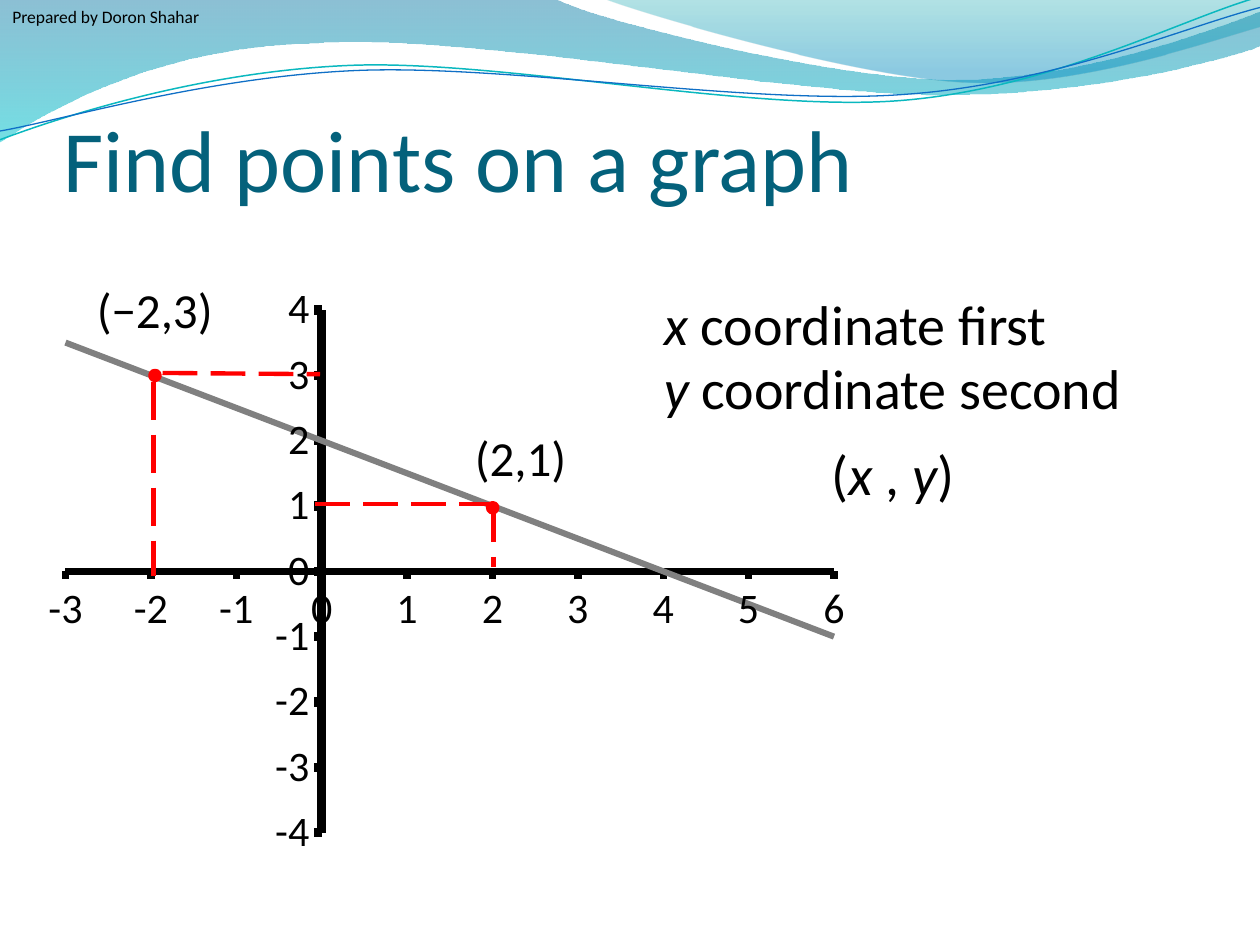
from dataclasses import dataclass
from math import cos, radians, sin

from lxml import etree
from pptx import Presentation
from pptx.chart.data import XyChartData
from pptx.dml.color import RGBColor as RGB
from pptx.enum.chart import XL_CHART_TYPE as Kind, XL_MARKER_STYLE as Mark, XL_TICK_MARK as Tick
from pptx.enum.dml import MSO_LINE as Dash
from pptx.enum.shapes import MSO_CONNECTOR as Link, MSO_SHAPE as Form
from pptx.enum.text import MSO_ANCHOR as Anchor, MSO_AUTO_SIZE as Fit, PP_ALIGN as Align
from pptx.oxml import parse_xml
from pptx.oxml.ns import nsdecls, qn
from pptx.util import Inches, Pt


@dataclass(frozen=True)
class Theme:
    font: str = "Calibri"
    chart: str = "Cambria"
    ink: RGB = RGB(0, 0, 0)
    title: RGB = RGB(0x04, 0x61, 0x7B)
    red: RGB = RGB(255, 0, 0)
    blue: RGB = RGB(0x0F, 0x6F, 0xC6)
    teal: RGB = RGB(0x0A, 0xB8, 0xBF)
    trend: str = "808080"
    head: int = 50
    body: int = 32
    label: int = 28
    axis: int = 24
    note: int = 10


theme = Theme()


def write(frame, text, size=theme.body, color=theme.ink):
    """Fill the frame; parts between asterisks are italic."""
    frame.word_wrap = True
    para = frame.paragraphs[0]
    para.alignment = Align.LEFT
    for i, part in enumerate(text.split("*")):
        if part:
            run = para.add_run()
            run.text = part
            font = run.font
            font.name, font.size, font.italic = theme.font, Pt(size), i % 2 == 1
            font.color.rgb = color


def draw_wave(start, parts, close=False):
    """Draw lines (2 numbers) and cubic curves (6 numbers) on the layout."""
    points = [start] + [part[i:i + 2] for part in parts for i in range(0, len(part), 2)]
    points = [(Inches(x), Inches(y)) for x, y in points]
    pen = shapes.build_freeform(*points[0], scale=1.0)
    pen.add_line_segments(points[1:], close=close)
    wave = pen.convert_to_shape()
    wave.shadow.inherit = False
    lines = wave.element.findall(".//" + qn("a:lnTo"))
    for part in parts:
        group, lines = lines[:len(part) // 2], lines[len(part) // 2:]
        if len(group) == 3:
            curve = etree.Element(qn("a:cubicBezTo"))
            group[0].addprevious(curve)
            for line in group:
                curve.append(line[0])
                line.getparent().remove(line)
    tree = layout.placeholders[0].element.getparent()
    wave.element[0][0].set("id", str(100 + len(tree)))
    tree.append(wave.element)
    return wave


deck = Presentation()
deck.slide_width, deck.slide_height = Inches(10), Inches(7.5)
layout = deck.slide_layouts[5]
slide = deck.slides.add_slide(layout)
shapes = slide.shapes

# Bands: start, parts, gradient stops (place, color, alpha)
bands = [
    ((0, 0), [(4.4, -0.01), (4.76, 0.17, 6.64, 0.63, 7.58, 0.63), (8.53, 0.63, 9.58, 0.26, 10, 0.09),
              (10.01, 0.36), (9.83, 0.44, 8.7, 0.76, 7.46, 0.75), (6.22, 0.75, 3.82, 0.28, 2.57, 0.34),
              (1.29, 0.36, 0.46, 0.83, -0.01, 1.13), (0, 0)],
     [(0, "0074A1", 45), (1, "00C6CF", 55)]),
    ((4.79, -0.01), [(5.09, 0.11, 6.82, 0.62, 7.69, 0.65), (8.56, 0.69, 9.61, 0.32, 10, 0.21),
                     (10, 0), (4.79, -0.01)],
     [(0, "00A1A9", 30), (0.8, "008BBF", 45)]),
]
for start, parts, stops in bands:
    band = draw_wave(start, parts, close=True)
    band.line.fill.background()
    band.fill.gradient()
    band.fill.gradient_angle = 270
    for stop, (place, color, _) in zip(band.fill.gradient_stops, stops):
        stop.position = place
        stop.color.rgb = RGB.from_string(color)
    for node, (_, _, alpha) in zip(band.element.spPr.iter(qn("a:srgbClr")), stops):
        etree.SubElement(node, qn("a:alpha")).set("val", str(alpha * 1000))

# Curves are laid flat about their middle, then tilted back
tilt = 2.7
c, s = cos(radians(tilt)), sin(radians(tilt))
curves = [
    (0.575, (0, 1.11), [(0.48, 0.93, 1.58, 0.57, 2.77, 0.52), (3.95, 0.47, 5.93, 0.89, 7.13, 0.8),
                        (8.33, 0.71, 9.38, 0.15, 9.98, -0.02)], theme.teal, 0.85),
    (0.59, (0, 1.04), [(0.47, 0.96, 1.64, 0.61, 2.83, 0.56), (4.03, 0.51, 5.97, 0.84, 7.17, 0.75),
                       (8.36, 0.67, 9.41, 0.21, 10, 0.06)], theme.blue, 0.75),
]
for mid, start, parts, color, width in curves:
    flat = []
    for part in [start] + parts:
        pairs = [(x - 5, y - mid) for x, y in zip(part[::2], part[1::2])]
        flat.append([n for x, y in pairs for n in (5 + x * c - y * s, mid + x * s + y * c)])
    curve = draw_wave(flat[0], flat[1:])
    curve.rotation = 360 - tilt
    curve.fill.background()
    curve.line.color.rgb, curve.line.width = color, Pt(width)

title = shapes.title
title.left, title.top, title.width, title.height = map(Inches, (0.5, 0.42, 9, 1.25))
frame = title.text_frame
frame.margin_left = frame.margin_right = frame.margin_bottom = 0
frame.vertical_anchor = Anchor.BOTTOM
write(frame, "Find points on a graph", size=theme.head, color=theme.title)

# Graph
wide, high = 6.58, 4.75
data = XyChartData()
series = data.add_series("Series 1")
for x in (0, 1, 2):
    series.add_data_point(x, 2 - x / 2)
chart = shapes.add_chart(Kind.XY_SCATTER, *map(Inches, (0.25, 2.17, wide, high)), data).chart
chart.has_title = chart.has_legend = False
chart.font.name, chart.font.size, chart.font.color.rgb = theme.chart, Pt(theme.note), theme.ink
for axis, low, top, width in ((chart.category_axis, -3, 6, 4.25), (chart.value_axis, -4, 4, 5.25)):
    axis.minimum_scale, axis.maximum_scale, axis.major_unit = low, top, 1
    axis.has_major_gridlines = False
    axis.major_tick_mark, axis.minor_tick_mark = Tick.OUTSIDE, Tick.NONE
    axis.format.line.color.rgb, axis.format.line.width = theme.ink, Pt(width)
    axis.tick_labels.font.name, axis.tick_labels.font.size = theme.font, Pt(theme.axis)

plot = chart.plots[0]
plot.vary_by_categories = False
dots = plot.series[0]
dots.format.line.fill.background()
dots.marker.style, dots.marker.size = Mark.DIAMOND, 2
dots.marker.format.fill.background()
dots.marker.format.line.fill.background()
trend = parse_xml(
    f'<c:trendline {nsdecls("c", "a")}><c:spPr><a:ln w="{Pt(3.5)}"><a:solidFill>'
    f'<a:srgbClr val="{theme.trend}"/></a:solidFill></a:ln></c:spPr><c:trendlineType val="linear"/>'
    '<c:forward val="4"/><c:backward val="3"/><c:dispRSqr val="0"/><c:dispEq val="0"/></c:trendline>')
dots._element.find(qn("c:xVal")).addprevious(trend)

area = plot._element.getparent()
for old in area.findall(qn("c:layout")):
    area.remove(old)
place = parse_xml(f'<c:layout {nsdecls("c")}><c:manualLayout/></c:layout>')
for tag, value in (("layoutTarget", "inner"), ("xMode", "edge"), ("yMode", "edge"),
                   ("x", 0.27 / wide), ("y", 0.29 / high), ("w", 6.1 / wide), ("h", 4.15 / high)):
    etree.SubElement(place[0], qn(f"c:{tag}")).set("val", str(value))
area.insert(0, place)

# Dashed guides and points
for x1, y1, x2, y2, width in ((1.29, 2.96, 2.54, 2.97, 2.5), (1.22, 3.03, 1.22, 4.57, 2.75),
                              (2.5, 4, 3.92, 4, 2.5), (3.92, 4, 3.92, 4.5, 2.75)):
    guide = shapes.add_connector(Link.STRAIGHT, *map(Inches, (x1, y1, x2, y2)))
    guide.line.color.rgb, guide.line.width = theme.red, Pt(width)
    guide.line.dash_style = Dash.LONG_DASH
    etree.SubElement(guide._element.spPr, qn("a:effectLst"))

for x, y in ((3.87, 3.99), (1.19, 2.94)):
    dot = shapes.add_shape(Form.OVAL, *map(Inches, (x, y, 0.08, 0.08)))
    dot.shadow.inherit = False
    dot.fill.solid()
    dot.fill.fore_color.rgb = dot.line.color.rgb = theme.red
    dot.line.width = Pt(2)

# Labels
for text, size, *box in (
    ("(−2,3)", theme.label, 0.67, 2.17, 1.17, 0.57),
    ("(2,1)", theme.label, 3.67, 3.34, 1.17, 0.57),
    ("*x* coordinate first", theme.body, 5.17, 2.25, 4, 0.64),
    ("*y* coordinate second", theme.body, 5.17, 2.76, 4.42, 0.64),
    ("(*x *, *y*)", theme.body, 6.5, 3.44, 1.33, 0.64),
    ("Prepared by Doron Shahar", theme.note, 0, 0, 2, 0.27),
):
    frame = shapes.add_textbox(*map(Inches, box)).text_frame
    write(frame, text, size=size)
    frame.auto_size = Fit.SHAPE_TO_FIT_TEXT

deck.save("out.pptx")
